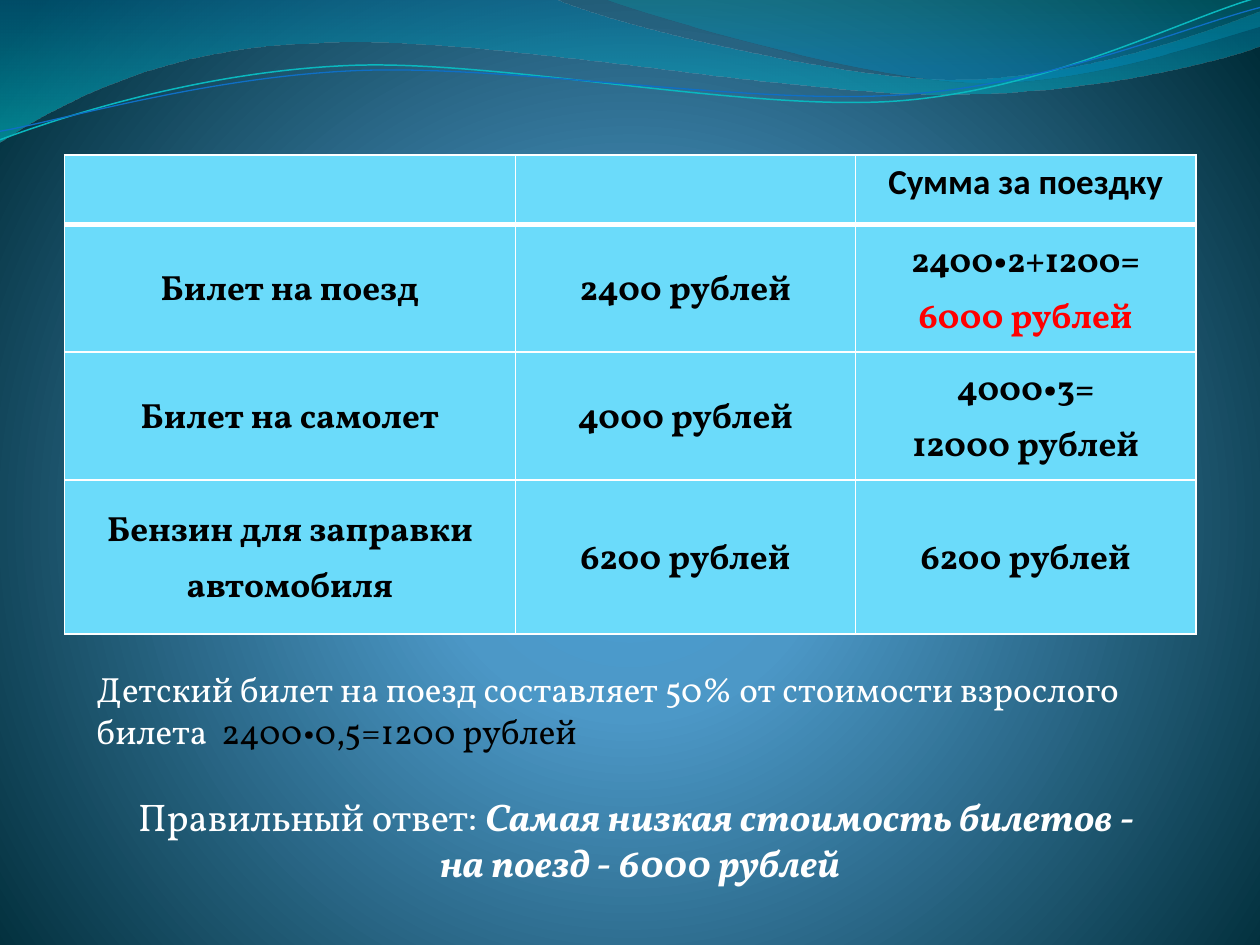
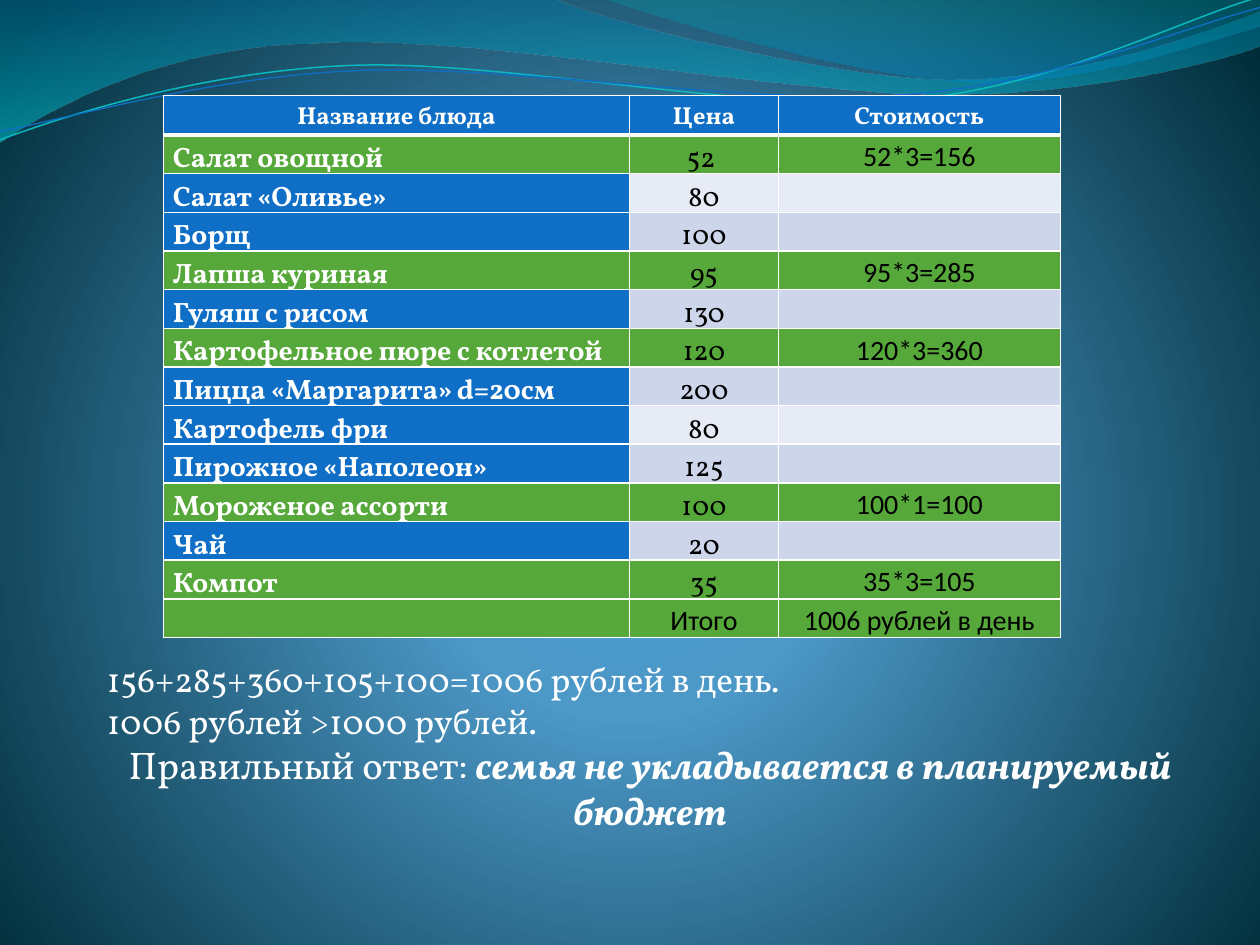
from dataclasses import dataclass

from lxml import etree
from pptx import Presentation
from pptx.dml.color import RGBColor
from pptx.enum.text import MSO_ANCHOR, MSO_AUTO_SIZE, PP_ALIGN
from pptx.oxml.ns import qn
from pptx.util import Pt

LEFT, CENTER, JUSTIFY = PP_ALIGN.LEFT, PP_ALIGN.CENTER, PP_ALIGN.JUSTIFY
TOP, MIDDLE = MSO_ANCHOR.TOP, MSO_ANCHOR.MIDDLE
GROW = MSO_AUTO_SIZE.SHAPE_TO_FIT_TEXT
LINE_TILT = 357.3


@dataclass(frozen=True)
class Theme:
    serif: str = "Vollkorn"
    sans: str = "Calibri"
    white: str = "FFFFFF"
    black: str = "000000"
    red: str = "FF0000"
    blue: str = "0F6FC6"
    teal: str = "0AB8BF"
    sky: str = "6BDBFA"
    green: str = "55A839"
    band_light: str = "E7EBF5"
    band_dark: str = "CCD5EA"
    backdrop: tuple = ((0, "4AA0D6", 100), (25, "4C98C7", 100), (100, "002C38", 100))
    wave_wide: tuple = ((0, "0074A1", 45), (100, "00C6CF", 55))
    wave_right: tuple = ((0, "00A1A9", 30), (80, "008BBF", 45))
    answer: int = 22
    body: int = 20
    menu: int = 16
    menu_head: int = 14
    thin: int = 1
    thick: int = 3


WIDE_WAVE = [
    (0, 0), (316.8, -0.7),
    (342.7, 12.2, 478.1, 45.4, 545.8, 45.4), (614.2, 45.4, 689.8, 18.7, 720, 6.5),
    (720.7, 25.9),
    (707.8, 31.7, 626.4, 54.7, 537.1, 54), (447.8, 54, 275, 20.2, 185, 24.5),
    (92.9, 25.9, 33.1, 59.8, -0.7, 81.4),
]
RIGHT_WAVE = [
    (344.9, -0.7),
    (366.5, 7.9, 491, 44.6, 553.7, 46.8), (616.3, 49.7, 691.9, 23, 720, 15.1),
    (720, 0),
]
TEAL_LINE = [
    (-1.4, 62.9),
    (33.8, 51.7, 114.1, 29.4, 199.8, 29.9), (284.9, 30.3, 425.8, 67.3, 512.4, 64.9),
    (599, 62.4, 676.5, 25.7, 720.2, 15.6),
]
BLUE_LINE = [
    (-1.1, 58),
    (32.9, 53.8, 118.3, 32.5, 204.1, 33), (290.6, 33.4, 428.9, 63.8, 515.5, 61.4),
    (601.3, 59.6, 678.4, 30.1, 721.4, 21.3),
]

TRIP_ROWS = [
    ("", "", "Сумма за поездку"),
    ("Билет на поезд", "2400 рублей", "2400•2+1200=\n6000 рублей"),
    ("Билет на самолет", "4000 рублей", "4000•3=\n12000 рублей"),
    ("Бензин для заправки автомобиля", "6200 рублей", "6200 рублей"),
]
MENU_ROWS = [
    ("Название блюда", "Цена", "Стоимость"),
    ("Салат овощной", "52 ", "52*3=156"),
    ("Салат «Оливье»", "80", ""),
    ("Борщ", "100", ""),
    ("Лапша куриная", "95", "95*3=285"),
    ("Гуляш с рисом", "130", ""),
    ("Картофельное пюре с котлетой", "120", "120*3=360"),
    ("Пицца «Маргарита» d=20см", "200", ""),
    ("Картофель фри", "80", ""),
    ("Пирожное «Наполеон»", "125", ""),
    ("Мороженое ассорти", "100", "100*1=100"),
    ("Чай", "20", ""),
    ("Компот", "35", "35*3=105"),
    ("", "Итого", "1006 рублей в день"),
]


def rgb(color):
    return RGBColor.from_string(color)


def add_node(parent, tag, **attributes):
    return etree.SubElement(parent, qn(tag), {k: str(v) for k, v in attributes.items()})


class Deck:
    def __init__(self, theme):
        self.theme = theme
        self.prs = Presentation()
        self.prs.slide_width, self.prs.slide_height = Pt(720), Pt(540)
        self.s = None

    def slide(self):
        t = self.theme
        self.s = self.prs.slides.add_slide(self.prs.slide_layouts[6])
        grad = self.gradient(self.s.background.fill, self.s.element, t.backdrop)
        circle = add_node(grad, "a:path", path="circle")
        add_node(circle, "a:fillToRect", l=10000, t=110000, r=10000, b=100000)
        self.wave(WIDE_WAVE, t.wave_wide)
        self.wave(RIGHT_WAVE, t.wave_right)
        self.curve(TEAL_LINE, t.teal, 0.85)
        self.curve(BLUE_LINE, t.blue, 0.75)

    def gradient(self, fill, owner, stops):
        fill.gradient()
        grad = owner.find(".//" + qn("a:gradFill"))
        for child in list(grad):
            grad.remove(child)
        stop_list = add_node(grad, "a:gsLst")
        for position, color, alpha in stops:
            stop = add_node(stop_list, "a:gs", pos=position * 1000)
            add_node(add_node(stop, "a:srgbClr", val=color), "a:alpha", val=alpha * 1000)
        return grad

    def outline(self, steps, close):
        ends = [(Pt(step[-2]), Pt(step[-1])) for step in steps]
        builder = self.s.shapes.build_freeform(*ends[0], scale=1.0)
        builder.add_line_segments(ends[1:], close=close)
        shape = builder.convert_to_shape()
        shape.shadow.inherit = False
        segments = list(shape.element.iter(qn("a:lnTo")))
        for segment, step in zip(segments, steps[1:]):
            if len(step) == 6:
                self.bend(shape, segment, step)
        return shape

    def bend(self, shape, segment, step):
        bezier = etree.Element(qn("a:cubicBezTo"))
        for x, y in zip(step[::2], step[1::2]):
            add_node(bezier, "a:pt", x=Pt(x) - shape.left, y=Pt(y) - shape.top)
        segment.getparent().replace(segment, bezier)

    def wave(self, steps, stops):
        shape = self.outline(steps, True)
        shape.line.fill.background()
        grad = self.gradient(shape.fill, shape.element, stops)
        add_node(grad, "a:lin", ang=5400000, scaled=0)

    def curve(self, steps, color, width):
        shape = self.outline(steps, False)
        shape.rotation = LINE_TILT
        shape.fill.background()
        shape.line.color.rgb = rgb(color)
        shape.line.width = Pt(width)

    def style(self, r, size, color, font=None, bold=False, italic=False):
        r.font.name = font or self.theme.serif
        r.font.size = Pt(size)
        r.font.color.rgb = rgb(color)
        r.font.bold, r.font.italic = bold, italic

    def text(self, left, top, paragraphs):
        box = self.s.shapes.add_textbox(Pt(left), Pt(top), Pt(635), Pt(133.2))
        tf = box.text_frame
        tf.word_wrap = True
        tf.auto_size = GROW
        for i, (align, before, runs) in enumerate(paragraphs):
            p = tf.add_paragraph() if i else tf.paragraphs[0]
            p.alignment = align
            p.space_before = Pt(before)
            for text, size, color, strong in runs:
                r = p.add_run()
                r.text = text
                self.style(r, size, color, bold=strong, italic=strong)

    def table(self, left, top, widths, heights):
        frame = self.s.shapes.add_table(len(heights), len(widths), Pt(left), Pt(top),
                                        Pt(sum(widths)), Pt(sum(heights)))
        table = frame.table
        for column, width in zip(table.columns, widths):
            column.width = Pt(width)
        for row, height in zip(table.rows, heights):
            row.height = Pt(height)
        return table

    def cell(self, table, row, col, text, fill, size, color,
             font=None, bold=False, align=CENTER, anchor=TOP):
        cell = table.cell(row, col)
        cell.margin_left = cell.margin_right = Pt(5.4)
        cell.margin_top = cell.margin_bottom = 0
        cell.vertical_anchor = anchor
        self.borders(cell, row)
        cell.fill.solid()
        cell.fill.fore_color.rgb = rgb(fill)
        if text:
            cell.text_frame.text = text
        for p in cell.text_frame.paragraphs:
            p.alignment = align
            p.line_spacing = 1.15 if text else 1.0
            for r in p.runs:
                self.style(r, size, color, font, bold)

    def borders(self, cell, row):
        t = self.theme
        widths = {"a:lnL": t.thin, "a:lnR": t.thin,
                  "a:lnT": t.thick if row == 1 else t.thin,
                  "a:lnB": t.thick if row == 0 else t.thin}
        props = cell._tc.get_or_add_tcPr()
        for tag, width in widths.items():
            line = add_node(props, tag, w=Pt(width))
            add_node(add_node(line, "a:solidFill"), "a:srgbClr", val=t.white)


def trip_slide(deck):
    t = deck.theme
    deck.slide()
    table = deck.table(36.9, 88.6, [257.6, 194.4, 194.4], [39.6, 73, 73, 88.2])
    for row, values in enumerate(TRIP_ROWS):
        font, anchor = (t.serif, MIDDLE) if row else (t.sans, TOP)
        for col, value in enumerate(values):
            deck.cell(table, row, col, value, t.sky, t.body, t.black, font, True,
                      anchor=anchor)
    cheapest = table.cell(1, 2).text_frame.paragraphs[1]
    cheapest.runs[0].font.color.rgb = rgb(t.red)
    deck.text(48.2, 378, [
        (LEFT, 0, [("Детский билет на поезд составляет 50% от стоимости взрослого билета  ",
                    t.body, t.white, False),
                   ("2400•0,5=1200 рублей", t.body, t.black, False)]),
        (CENTER, 23.6, [("Правильный ответ: ", t.answer, t.white, False),
                        ("Самая низкая стоимость билетов - ", t.answer, t.white, True)]),
        (CENTER, 0, [("на поезд - 6000 рублей", t.answer, t.white, True)]),
    ])


def menu_slide(deck):
    t = deck.theme
    deck.slide()
    deck.text(54, 372, [
        (LEFT, 0, [("156+285+360+105+100=1006 рублей в день.", t.body, t.white, False)]),
        (LEFT, 0, [("1006 рублей >1000 рублей.", t.body, t.white, False)]),
        (CENTER, 0, [("Правильный ответ: ", t.answer, t.white, False),
                     ("семья не укладывается в планируемый бюджет",
                      t.answer, t.white, True)]),
    ])
    table = deck.table(93.4, 54.7, [266.4, 85, 161.2], [22.5] + [22.1] * 13)
    total = len(MENU_ROWS) - 1
    for row, (dish, price, cost) in enumerate(MENU_ROWS):
        if row == 0:
            for col, title in enumerate((dish, price, cost)):
                deck.cell(table, row, col, title, t.blue, t.menu_head, t.white, bold=True)
            continue
        band = t.band_dark if row % 2 else t.band_light
        name_fill, value_fill = (t.green, t.green) if cost else (t.blue, band)
        price_font = t.sans if row == total else t.serif
        deck.cell(table, row, 0, dish, name_fill, t.menu, t.white, bold=True, align=JUSTIFY)
        deck.cell(table, row, 1, price, value_fill, t.menu, t.black, price_font)
        deck.cell(table, row, 2, cost, value_fill, t.menu, t.black, t.sans)


def main():
    deck = Deck(Theme())
    trip_slide(deck)
    menu_slide(deck)
    deck.prs.save("out.pptx")


if __name__ == "__main__":
    main()
